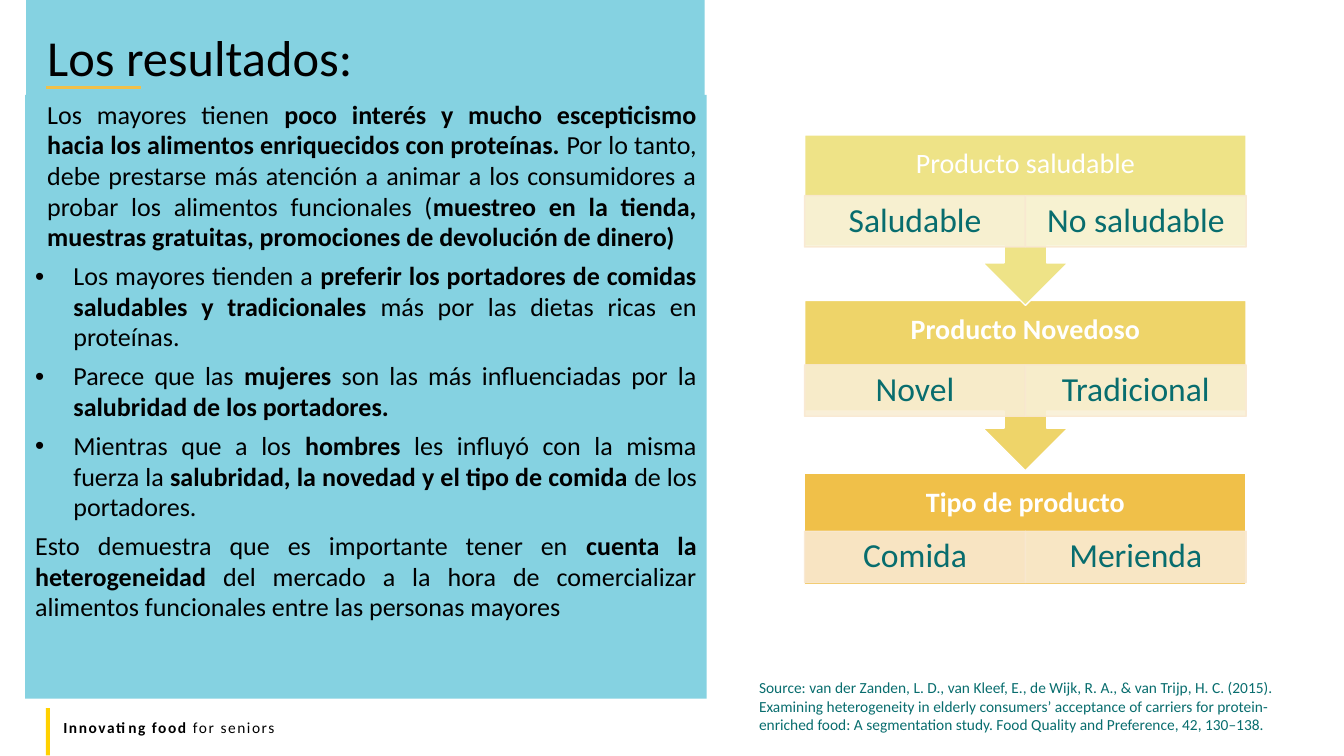
import pptx
import pptx.dml.color
import pptx.enum.shapes
import pptx.enum.text
import pptx.oxml
import pptx.oxml.ns
import pptx.util
from lxml import etree

Inches, Pt = pptx.util.Inches, pptx.util.Pt
RGB = pptx.dml.color.RGBColor.from_string
SHAPE = pptx.enum.shapes.MSO_SHAPE
ALIGN = pptx.enum.text.PP_ALIGN
ANCHOR = pptx.enum.text.MSO_ANCHOR
qn = pptx.oxml.ns.qn

THEME = {
    "font": "Calibri",
    "panel": "85D2E1", "ink": "000000", "teal": "086D6E", "white": "FFFFFF",
    "accent": "F0C049", "bar": "FFD100", "cell_line": "F9E8D0",
    "title": 36, "body": 18.6, "header": 20, "cell": 24, "small": 11,
}

prs = pptx.Presentation()
prs.slide_width, prs.slide_height = Inches(13.33), Inches(7.5)
s = prs.slides.add_slide(prs.slide_layouts[6])


def add_box(at, fill=None, line=None, kind=SHAPE.RECTANGLE, alpha=None):
    """Add a filled shape, or a plain text box when no fill is given."""
    box = [Inches(v) for v in at]
    if fill is None:
        sp = s.shapes.add_textbox(*box)
    else:
        sp = s.shapes.add_shape(kind, *box)
        sp.shadow.inherit = False
        sp.fill.solid()
        sp.fill.fore_color.rgb = RGB(fill)
        if line:
            sp.line.color.rgb = RGB(line)
            sp.line.width = Pt(1)
        else:
            sp.line.fill.background()
        if alpha:
            for clr in sp._element.spPr.iter(qn("a:srgbClr")):
                etree.SubElement(clr, qn("a:alpha")).set("val", str(alpha * 1000))
    sp.text_frame.word_wrap = True
    return sp


def write(sp, paragraphs, size, color, anchor=ANCHOR.TOP, bold=False, **paragraph_format):
    """Write (text, left, hanging) paragraphs; asterisks switch bold on and off."""
    tf = sp.text_frame
    tf.vertical_anchor = anchor
    for i, (text, left, hanging) in enumerate(paragraphs):
        p = tf.add_paragraph() if i else tf.paragraphs[0]
        pPr = p._p.get_or_add_pPr()
        pPr.set("marL", str(Inches(left)))
        pPr.set("indent", str(-Inches(hanging)))
        if hanging:
            etree.SubElement(pPr, qn("a:buFont")).set("typeface", "Arial")
            etree.SubElement(pPr, qn("a:buChar")).set("char", "•")
        for name, value in paragraph_format.items():
            if i or name != "space_before":
                setattr(p, name, value)
        for j, part in enumerate(text.split("*")):
            if not part:
                continue
            r = p.add_run()
            r.text = part
            r.font.color.rgb = RGB(THEME[color])
            font = {"name": THEME["font"], "size": Pt(THEME[size]), "bold": bold or j % 2 == 1}
            for name, value in font.items():
                setattr(r.font, name, value)


# Backdrop and footer
add_box((0.26, 0, 6.73, 6.48), THEME["panel"])
footer = add_box((0.53, 7.07, 12, 0.29))
write(footer, [("*Innovating food *for seniors", 0, 0)], "small", "ink")
for r in footer.text_frame.paragraphs[0].runs:
    r._r.get_or_add_rPr().set("spc", "110")
add_box((0.24, 7.24, 0.47, 0.04), THEME["bar"]).rotation = 270

# Findings
findings = [
    ("Los mayores tienen *poco interés y mucho escepticismo hacia los alimentos "
     "enriquecidos con proteínas. *Por lo tanto, debe prestarse más atención a animar a "
     "los consumidores a probar los alimentos funcionales (*muestreo en la tienda, "
     "muestras gratuitas, promociones de devolución de dinero)*", 0.12, 0),
    ("Los mayores tienden a *preferir los portadores de comidas saludables y "
     "tradicionales *más por las dietas ricas en proteínas.", 0.38, 0.38),
    ("Parece que las *mujeres* son las más influenciadas por la "
     "*salubridad de los portadores.*", 0.38, 0.38),
    ("Mientras que a los *hombres* les influyó con la misma fuerza la "
     "*salubridad, la novedad y el tipo de comida *de los portadores.", 0.38, 0.38),
    ("Esto demuestra que es importante tener en *cuenta la heterogeneidad* del mercado a "
     "la hora de comercializar alimentos funcionales entre las personas mayores", 0, 0),
]
write(add_box((0.25, 0.94, 6.76, 5.99), THEME["panel"]), findings, "body", "ink",
      alignment=ALIGN.JUSTIFY, space_before=Pt(6), line_spacing=0.98)

# Title
write(add_box((0.37, 0.3, 5.56, 0.64)), [("Los resultados:", 0, 0)], "title", "ink",
      ANCHOR.MIDDLE, line_spacing=0.8)

# Product steps, drawn from the bottom up so each arrow overlaps the next step
LEFT, WIDTH, HEADER_H, CELL_H = 7.98, 4.38, 0.59, 0.51
steps = [
    ("Tipo de producto", True, 4.7, 1.1, SHAPE.RECTANGLE, "F0C049",
     5.27, [("Comida", "F9E8D0"), ("Merienda", "F9EBD2")]),
    ("Producto Novedoso", True, 2.98, 1.69, SHAPE.UP_ARROW_CALLOUT, "EED469",
     3.62, [("Novel", "F9EED4"), ("Tradicional", "F9F0D6")]),
    ("Producto saludable", False, 1.34, 1.69, SHAPE.UP_ARROW_CALLOUT, "EEE387",
     1.94, [("Saludable", "F8F2D8"), ("No saludable", "F8F4DA")]),
]
centred = {"anchor": ANCHOR.MIDDLE, "alignment": ALIGN.CENTER, "line_spacing": 0.9}
for header, bold, top, height, kind, fill, cell_top, cells in steps:
    sp = add_box((LEFT, top, WIDTH, height), fill, THEME["white"], kind)
    if kind == SHAPE.UP_ARROW_CALLOUT:
        sp.rotation = 180
    write(add_box((LEFT, top, WIDTH, HEADER_H)), [(header, 0, 0)], "header", "white",
          bold=bold, **centred)
    for col, (label, tint) in enumerate(cells):
        sp = add_box((LEFT + col * WIDTH / 2, cell_top, WIDTH / 2, CELL_H),
                     tint, THEME["cell_line"], alpha=90)
        write(sp, [(label, 0, 0)], "cell", "teal", **centred)

# Source
citation = ("Source: van der Zanden, L. D., van Kleef, E., de Wijk, R. A., & van Trijp, H. C. "
            "(2015). Examining heterogeneity in elderly consumers’ acceptance of carriers for "
            "protein-enriched food: A segmentation study. Food Quality and Preference, 42, "
            "130–138.")
write(add_box((7.43, 6.68, 5.73, 0.66)), [(citation, 0, 0)], "small", "teal")

# Title underline
rule = s.shapes.add_connector(pptx.enum.shapes.MSO_CONNECTOR.STRAIGHT,
                              Inches(0.46), Inches(0.87), Inches(1.4), Inches(0.87))
rule.line.color.rgb = RGB(THEME["accent"])
rule.line.width = Pt(2.25)
etree.SubElement(rule._element.spPr, qn("a:effectLst"))

prs.save("out.pptx")
